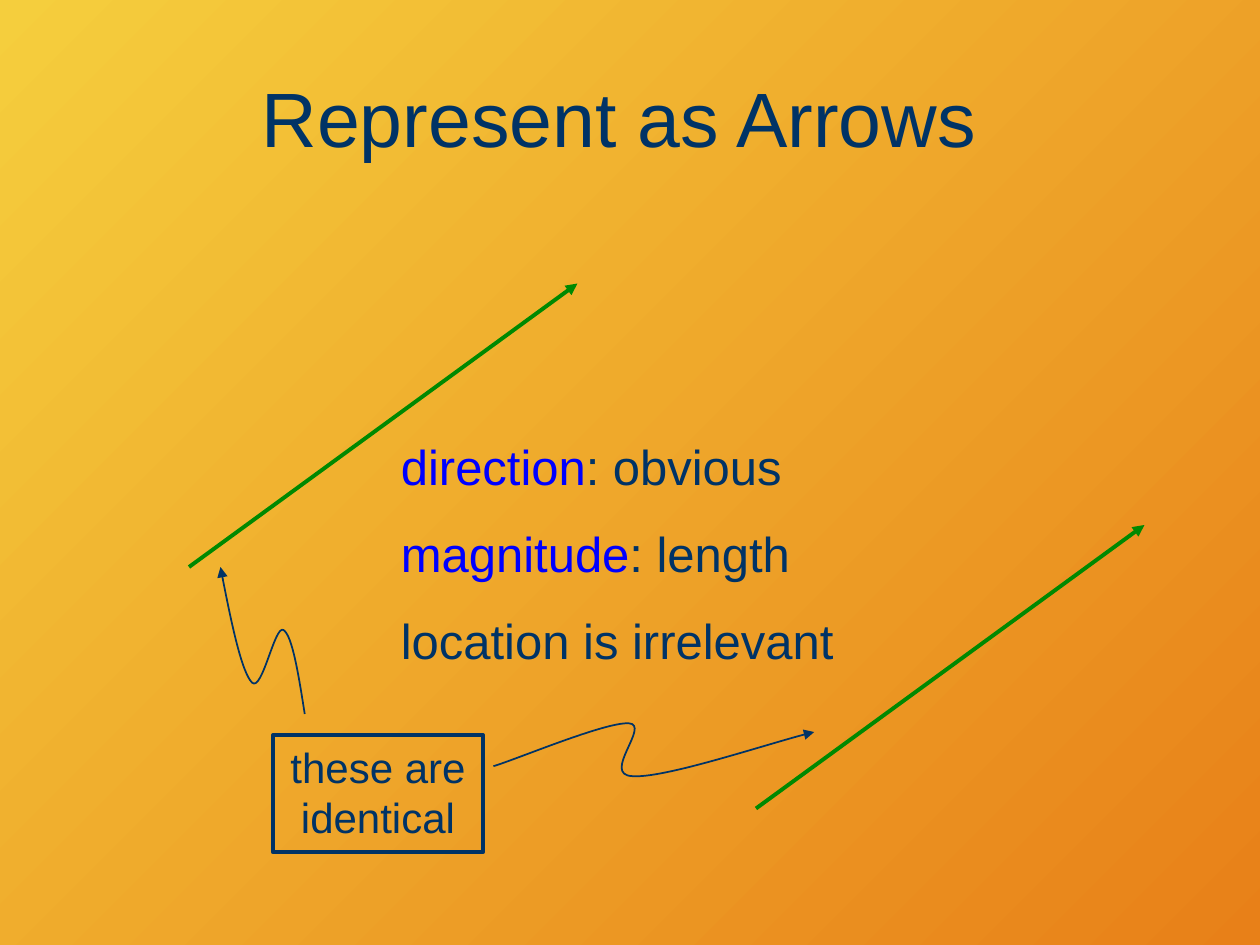
from dataclasses import dataclass

from lxml.etree import SubElement
from pptx import Presentation
from pptx.dml.color import RGBColor
from pptx.enum.shapes import MSO_CONNECTOR, MSO_SHAPE
from pptx.enum.text import MSO_ANCHOR, PP_ALIGN
from pptx.oxml.ns import qn
from pptx.util import Pt


@dataclass(frozen=True)
class Theme:
    font: str = "Arial"
    navy: RGBColor = RGBColor(0x00, 0x33, 0x66)
    blue: RGBColor = RGBColor(0x00, 0x00, 0xFF)
    green: RGBColor = RGBColor(0x00, 0x89, 0x01)
    yellow: RGBColor = RGBColor(0xF5, 0xCE, 0x3D)
    orange: RGBColor = RGBColor(0xE8, 0x80, 0x18)
    title: float = 44
    body: float = 28
    label: float = 24
    thick: float = 2.25
    thin: float = 1


@dataclass(frozen=True)
class Box:
    x: float
    y: float
    w: float
    h: float

    def emu(self) -> tuple:
        return Pt(self.x), Pt(self.y), Pt(self.w), Pt(self.h)


@dataclass(frozen=True)
class Property:
    term: str
    meaning: str


THEME = Theme()
VECTOR = (222, -162)
VECTOR_TAILS = [(108, 324), (432, 462)]
PROPERTIES = [
    Property("direction", ": obvious"),
    Property("magnitude", ": length"),
    Property("", "location is irrelevant"),
]
# Bezier points: a start, then two controls and an end for each segment
POINTERS = [
    [(174.2, 408), (170.6, 385.2), (167, 363), (162, 360),
     (157, 357), (149.8, 396), (144, 390),
     (138.2, 384), (131.8, 354), (126, 324)],
    [(282, 437.8), (295, 434), (345.6, 412.6), (359.3, 413.3),
     (372.2, 414), (343.4, 442.8), (361.4, 443.5),
     (378.7, 445), (443.5, 423.4), (465.3, 418.3)],
]


def style_line(shape, color: RGBColor, width: float, arrow: bool = True) -> None:
    shape.line.color.rgb = color
    shape.line.width = Pt(width)
    if arrow:
        SubElement(shape.line._get_or_add_ln(), qn("a:tailEnd"), type="triangle")


def style_paragraph(p, size: float, align=PP_ALIGN.LEFT, before: float = 0) -> None:
    p.alignment = align
    p.space_before = Pt(before)
    p.font.name = THEME.font
    p.font.size = Pt(size)
    p.font.color.rgb = THEME.navy


def draw_background(s) -> None:
    fill = s.background.fill
    fill.gradient()
    fill.gradient_angle = 315
    for stop, color in zip(fill.gradient_stops, (THEME.yellow, THEME.orange)):
        stop.color.rgb = color


def draw_title(s, box: Box, text: str) -> None:
    tf = s.shapes.add_textbox(*box.emu()).text_frame
    tf.word_wrap = True
    tf.vertical_anchor = MSO_ANCHOR.MIDDLE
    p = tf.paragraphs[0]
    p.text = text
    style_paragraph(p, THEME.title, PP_ALIGN.CENTER)


def draw_properties(s, box: Box, properties: list[Property]) -> None:
    tf = s.shapes.add_textbox(*box.emu()).text_frame
    tf.word_wrap = True
    for i, item in enumerate(properties):
        p = tf.add_paragraph() if i else tf.paragraphs[0]
        style_paragraph(p, THEME.body, before=16)
        if item.term:
            r = p.add_run()
            r.text = item.term
            r.font.color.rgb = THEME.blue
        p.add_run().text = item.meaning


def draw_vector(s, x: float, y: float) -> None:
    dx, dy = VECTOR
    line = s.shapes.add_connector(
        MSO_CONNECTOR.STRAIGHT, Pt(x), Pt(y), Pt(x + dx), Pt(y + dy))
    style_line(line, THEME.green, THEME.thick)
    SubElement(line._element.spPr, qn("a:effectLst"))


def draw_label(s, box: Box, text: str) -> None:
    sp = s.shapes.add_shape(MSO_SHAPE.RECTANGLE, *box.emu())
    sp.shadow.inherit = False
    sp.fill.background()
    style_line(sp, THEME.navy, THEME.thick, arrow=False)
    tf = sp.text_frame
    tf.word_wrap = True
    tf.vertical_anchor = MSO_ANCHOR.TOP
    p = tf.paragraphs[0]
    p.text = text
    style_paragraph(p, THEME.label, PP_ALIGN.CENTER, before=14)


def draw_pointer(s, points: list[tuple[float, float]]) -> None:
    """Draw a Bezier curve by merging each three straight steps into one."""
    start, *rest = [(Pt(x), Pt(y)) for x, y in points]
    builder = s.shapes.build_freeform(*start)
    builder.add_line_segments(rest, close=False)
    sp = builder.convert_to_shape()
    outline = next(sp._element.iter(qn("a:path")))
    steps = outline.findall(qn("a:lnTo"))
    for i in range(0, len(steps), 3):
        curve = SubElement(outline, qn("a:cubicBezTo"))
        for step in steps[i:i + 3]:
            curve.append(step[0])
            outline.remove(step)
    sp.shadow.inherit = False
    sp.fill.background()
    style_line(sp, THEME.navy, THEME.thin)


def main() -> None:
    prs = Presentation()
    prs.slide_width, prs.slide_height = Pt(720), Pt(540)
    s = prs.slides.add_slide(prs.slide_layouts[6])
    draw_background(s)
    draw_title(s, Box(36, 21.6, 648, 90), "Represent as Arrows ")
    draw_properties(s, Box(222, 246, 318, 142), PROPERTIES)
    for x, y in VECTOR_TAILS:
        draw_vector(s, x, y)
    draw_label(s, Box(156, 420, 120, 67), "these are identical")
    for points in POINTERS:
        draw_pointer(s, points)
    prs.save("out.pptx")


if __name__ == "__main__":
    main()
